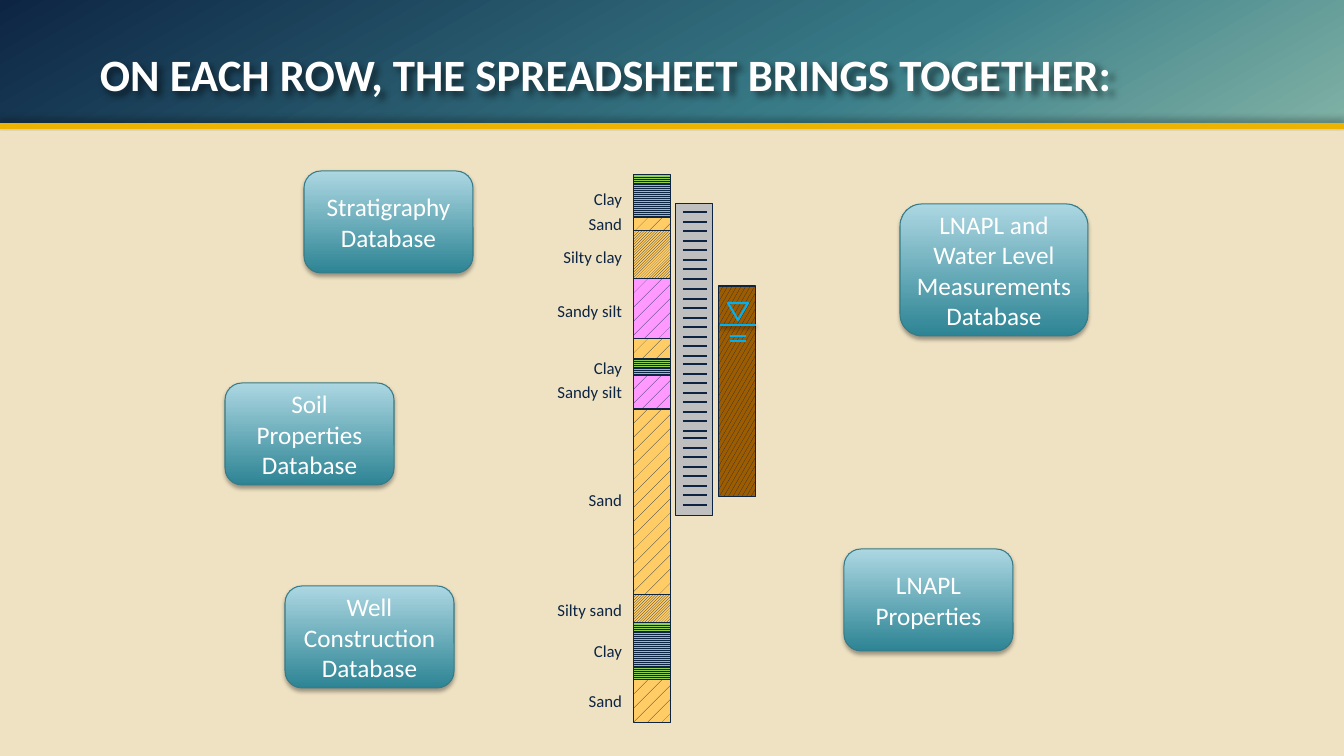
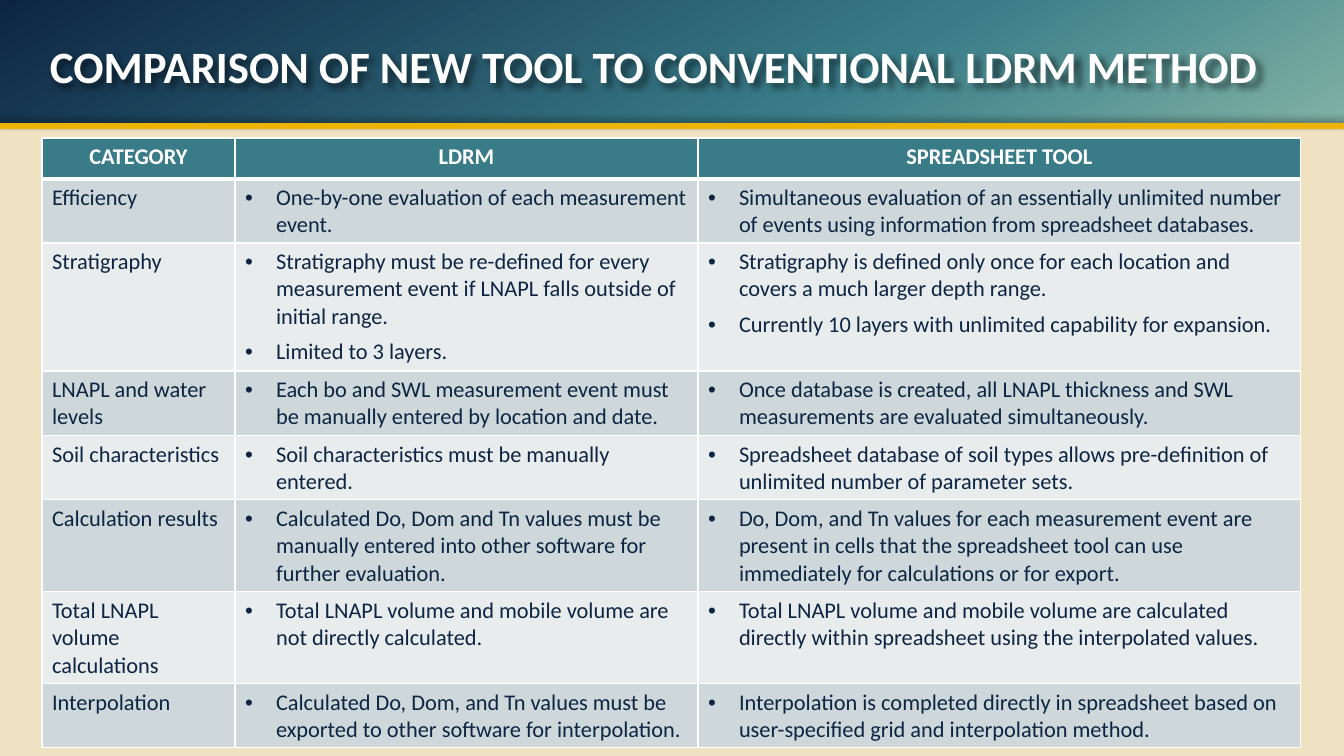
from lxml import etree
from pptx import Presentation
from pptx import util as u
from pptx.dml.color import RGBColor
from pptx.enum import dml, shapes, text
from pptx.oxml import ns

PX = 12192000 / 1344  # EMU in one px
FONT = "Calibri"

NAVY = RGBColor(0x0D, 0x25, 0x43)
TEAL = RGBColor(0x39, 0x7C, 0x88)
SAGE = RGBColor(0x80, 0xB2, 0xA5)
GOLD = RGBColor(0xEC, 0xB4, 0x00)
CREAM = RGBColor(0xEF, 0xE2, 0xC3)
WHITE = RGBColor(0xFF, 0xFF, 0xFF)
BLACK = RGBColor(0x00, 0x00, 0x00)
BOX_DARK = RGBColor(0x2D, 0x84, 0x94)
BOX_LIGHT = RGBColor(0xAC, 0xD7, 0xE2)
BOX_EDGE = RGBColor(0x36, 0x7B, 0x87)
CLAY_GREEN = RGBColor(0x92, 0xD0, 0x50)
SAND_YELLOW = RGBColor(0xFF, 0xCC, 0x66)
SILT_PINK = RGBColor(0xFF, 0x99, 0xFF)
LNAPL_BROWN = RGBColor(0x9E, 0x5C, 0x00)
WELL_GREY = RGBColor(0xBF, 0xBF, 0xBF)
WATER_BLUE = RGBColor(0x00, 0xB0, 0xF0)
ROW_FILLS = (RGBColor(0xCE, 0xD7, 0xDA), RGBColor(0xE8, 0xEC, 0xED))

# Soil types: pattern and background colour
PATTERN = dml.MSO_PATTERN
CLAY = (PATTERN.LIGHT_HORIZONTAL, CLAY_GREEN)
SAND = (PATTERN.PERCENT_5, SAND_YELLOW)
SILTY = (PATTERN.LIGHT_UPWARD_DIAGONAL, SAND_YELLOW)
SANDY_SILT = (PATTERN.PERCENT_5, SILT_PINK)
LNAPL = (PATTERN.LARGE_CONFETTI, LNAPL_BROWN)

# Each layer runs from its top to the top of the next
LAYERS = [(175, CLAY), (218, SAND), (231, SILTY), (279, SANDY_SILT),
          (339, SAND), (359, CLAY), (375, SANDY_SILT), (409, SAND),
          (595, SILTY), (623, CLAY), (680, SAND)]
COLUMN_BOTTOM = 723

LABELS = [(184, "Clay"), (209, "Sand"), (242, "Silty clay"),
          (296, "Sandy silt"), (353, "Clay"), (377, "Sandy silt"),
          (485, "Sand"), (595, "Silty sand"), (636, "Clay"), (686, "Sand")]

SOURCES = [
    ((304, 171, 169, 102), ["Stratigraphy Database"]),
    ((900, 204, 188, 132), ["LNAPL and Water Level Measurements", "Database"]),
    ((225, 383, 169, 102), ["Soil Properties", "Database"]),
    ((844, 549, 169, 102), ["LNAPL", "Properties"]),
    ((285, 586, 169, 102), ["Well Construction", "Database"]),
]

HEADINGS = ["CATEGORY", "LDRM", "SPREADSHEET TOOL"]
COLUMN_WIDTHS = [193, 463, 603]
ROW_HEIGHTS = [41, 64, 128, 65, 64, 92, 92, 64]
COMPARISON = [
    ("Efficiency",
     ["One-by-one evaluation of each measurement event."],
     ["Simultaneous evaluation of an essentially unlimited number of events "
      "using information from spreadsheet databases."]),
    ("Stratigraphy",
     ["Stratigraphy must be re-defined for every measurement event if LNAPL "
      "falls outside of initial range.",
      "Limited to 3 layers."],
     ["Stratigraphy is defined only once for each location and covers a much "
      "larger depth range.",
      "Currently 10 layers with unlimited capability for expansion."]),
    ("LNAPL and water levels",
     ["Each bo and SWL measurement event must be manually entered by location "
      "and date."],
     ["Once database is created, all LNAPL thickness and SWL measurements are "
      "evaluated simultaneously."]),
    ("Soil characteristics",
     ["Soil characteristics must be manually entered."],
     ["Spreadsheet database of soil types allows pre-definition of unlimited "
      "number of parameter sets."]),
    ("Calculation results",
     ["Calculated Do, Dom and Tn values must be manually entered into other "
      "software for further evaluation."],
     ["Do, Dom, and Tn values for each measurement event are present in cells "
      "that the spreadsheet tool can use immediately for calculations or for "
      "export."]),
    ("Total LNAPL volume calculations",
     ["Total LNAPL volume and mobile volume are not directly calculated."],
     ["Total LNAPL volume and mobile volume are calculated directly within "
      "spreadsheet using the interpolated values."]),
    ("Interpolation",
     ["Calculated Do, Dom, and Tn values must be exported to other software "
      "for interpolation."],
     ["Interpolation is completed directly in spreadsheet based on "
      "user-specified grid and interpolation method."]),
]


def px(length):
    return u.Emu(round(length * PX))


def add_node(parent, tag, **attributes):
    node = etree.SubElement(parent, ns.qn(tag))
    for name, value in attributes.items():
        node.set(name, str(value))
    return node


# Text
def write(frame, lines, size=16, color=NAVY, bold=False,
          align=text.PP_ALIGN.LEFT, bullet=False, gap=0):
    for index, line in enumerate(lines):
        para = frame.paragraphs[0] if index == 0 else frame.add_paragraph()
        para.alignment = align
        if bullet:
            props = para._p.get_or_add_pPr()
            props.set("marL", str(px(31)))
            props.set("indent", str(-px(31)))
            add_node(props, "a:buFont", typeface="Arial")
            add_node(props, "a:buChar", char="•")
        if index and gap:
            para.space_before = u.Pt(gap)
        span = para.add_run()
        span.text = line
        span.font.name = FONT
        span.font.size = u.Pt(size)
        span.font.bold = bold
        span.font.color.rgb = color


def add_label(page, at, line, **style):
    box = page.shapes.add_textbox(*map(px, at))
    box.text_frame.word_wrap = True
    write(box.text_frame, [line], **style)
    return box


# Shapes and lines
def cast_shadow(effects, opacity, blur, distance, angle):
    shadow = add_node(effects, "a:outerShdw", blurRad=u.Pt(blur),
                      dist=u.Pt(distance), dir=angle * 60000,
                      algn="ctr", rotWithShape=0)
    color = add_node(shadow, "a:srgbClr", val=BLACK)
    add_node(color, "a:alpha", val=opacity * 1000)


def shade(shape, *shadow):
    shape.shadow.inherit = False
    cast_shadow(shape._element.spPr.find(ns.qn("a:effectLst")), *shadow)


def add_block(page, at, kind=shapes.MSO_SHAPE.RECTANGLE, fill=None,
              pattern=None, line=None, weight=0.75):
    block = page.shapes.add_shape(kind, *map(px, at))
    block.shadow.inherit = False
    if pattern:
        block.fill.patterned()
        block.fill.pattern, block.fill.back_color.rgb = pattern
        block.fill.fore_color.rgb = NAVY
    elif fill is not None:
        block.fill.solid()
        block.fill.fore_color.rgb = fill
    else:
        block.fill.background()
    if line is None:
        block.line.fill.background()
    else:
        block.line.color.rgb = line
        block.line.width = u.Pt(weight)
    return block


def fill_gradient(shape, stops, clockwise):
    shape.fill.gradient()
    shape.fill.gradient_angle = 360 - clockwise
    stop_list = shape._element.spPr.find(
        ns.qn("a:gradFill")).find(ns.qn("a:gsLst"))
    for old in list(stop_list):
        stop_list.remove(old)
    for percent, color in stops:
        stop = add_node(stop_list, "a:gs", pos=percent * 1000)
        add_node(stop, "a:srgbClr", val=color)


def add_rule(page, left, right, y, color, weight, shadow=None):
    rule = page.shapes.add_connector(shapes.MSO_CONNECTOR.STRAIGHT,
                                     px(left), px(y), px(right), px(y))
    rule.line.color.rgb = color
    rule.line.width = u.Pt(weight)
    effects = add_node(rule._element.spPr, "a:effectLst")
    if shadow:
        cast_shadow(effects, *shadow)


# Background, header band and title of every page
def add_page(deck, title, title_at):
    page = deck.slides.add_slide(deck.slide_layouts[6])
    page.background.fill.solid()
    page.background.fill.fore_color.rgb = CREAM
    band = add_block(page, (0, 0, 1344, 126))
    fill_gradient(band, [(0, NAVY), (63, TEAL), (100, SAGE)], 60)
    add_rule(page, -2, 1344, 126, GOLD, 5, (40, 4, 3, 270))
    heading = add_label(page, title_at, title, size=32, color=WHITE, bold=True)
    shade(heading, 50, 4, 3, 45)
    return page


# Soil column, well screen and LNAPL interval
def add_soil_column(page):
    bottoms = [top for top, _ in LAYERS[1:]] + [COLUMN_BOTTOM]
    for (top, soil), bottom in zip(LAYERS, bottoms):
        add_block(page, (634, top, 37, bottom - top), pattern=soil, line=NAVY)
    for top, name in LABELS:
        add_label(page, (542, top, 90, 30), name, size=12,
                  align=text.PP_ALIGN.RIGHT)


def add_well_screen(page):
    add_block(page, (676, 204, 37, 312), fill=WELL_GREY, line=NAVY)
    for first in (212, 289, 364, 438):
        for slot in range(8):
            add_rule(page, 683, 707, first + round(slot * 67 / 7), NAVY, 1)


def add_lnapl_interval(page):
    add_block(page, (719, 286, 37, 211), pattern=LNAPL, line=NAVY)
    add_rule(page, 720, 756, 325, WATER_BLUE, 2, (38, 3.1, 1.6, 90))
    marker = add_block(page, (728, 303, 20, 17),
                       shapes.MSO_SHAPE.ISOSCELES_TRIANGLE,
                       line=WATER_BLUE, weight=1.5)
    marker.rotation = 180
    for y in (336, 341):
        add_rule(page, 730, 746, y, WATER_BLUE, 2)


def add_source(page, at, lines):
    box = add_block(page, at, shapes.MSO_SHAPE.FLOWCHART_ALTERNATE_PROCESS,
                    line=BOX_EDGE)
    fill_gradient(box, [(0, BOX_DARK), (100, BOX_LIGHT)], 270)
    shade(box, 35, 3.1, 1.8, 90)
    box.text_frame.vertical_anchor = text.MSO_ANCHOR.MIDDLE
    write(box.text_frame, lines, size=18, color=WHITE,
          align=text.PP_ALIGN.CENTER)


# Table
def style_cell(cell, fill, top=1, bottom=1):
    props = cell._tc.get_or_add_tcPr()
    for side, weight in (("L", 1), ("R", 1), ("T", top), ("B", bottom)):
        edge = add_node(props, "a:ln" + side, w=u.Pt(weight))
        add_node(add_node(edge, "a:solidFill"), "a:srgbClr", val=WHITE)
    cell.fill.solid()
    cell.fill.fore_color.rgb = fill


def add_comparison(page):
    frame = page.shapes.add_table(
        len(ROW_HEIGHTS), len(COLUMN_WIDTHS), px(42), px(138),
        px(sum(COLUMN_WIDTHS)), px(sum(ROW_HEIGHTS)))
    table = frame.table
    table.horz_banding = False
    for column, width in zip(table.columns, COLUMN_WIDTHS):
        column.width = px(width)
    for row, height in zip(table.rows, ROW_HEIGHTS):
        row.height = px(height)
    for cell, heading in zip(table.rows[0].cells, HEADINGS):
        style_cell(cell, TEAL, bottom=3)
        write(cell.text_frame, [heading], color=WHITE, bold=True,
              align=text.PP_ALIGN.CENTER)
    for number, (category, *methods) in enumerate(COMPARISON, 1):
        for index, lines in enumerate([[category], *methods]):
            cell = table.cell(number, index)
            style_cell(cell, ROW_FILLS[(number - 1) % 2],
                       top=3 if number == 1 else 1)
            write(cell.text_frame, lines, bullet=index > 0, gap=6)


def main():
    deck = Presentation()
    deck.slide_width, deck.slide_height = px(1344), px(756)

    page = add_page(deck, "ON EACH ROW, THE SPREADSHEET BRINGS TOGETHER:",
                    (90, 42, 1210, 64))
    add_soil_column(page)
    add_well_screen(page)
    add_lnapl_interval(page)
    for at, lines in SOURCES:
        add_source(page, at, lines)

    page = add_page(deck, "COMPARISON OF NEW TOOL TO CONVENTIONAL LDRM METHOD",
                    (40, 34, 1259, 64))
    add_comparison(page)
    deck.save("out.pptx")


if __name__ == "__main__":
    main()
